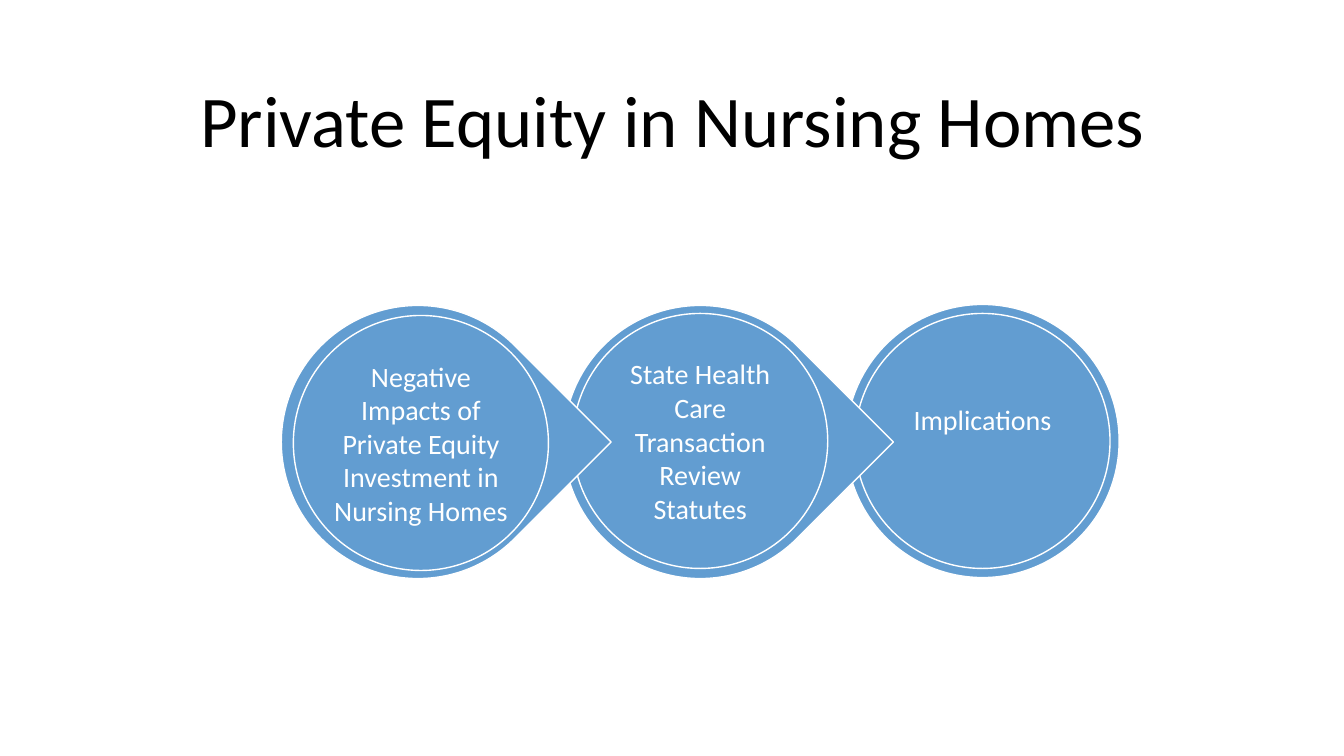
from dataclasses import dataclass

from pptx import Presentation
from pptx.dml.color import RGBColor
from pptx.enum.shapes import MSO_SHAPE
from pptx.enum.text import MSO_ANCHOR, PP_ALIGN
from pptx.slide import Slide
from pptx.util import Inches, Pt

COLORS = {"title": "000000", "drop": "629DD1", "light": "FFFFFF"}
FONT = "Calibri"
DROP_SIZE = 2.71
RING_SIZE = 2.53
LABEL_SIZE = 1.81
INSET = 0.03


@dataclass
class Stage:
    label: str
    drop_left: float
    drop_top: float
    ring_left: float
    ring_top: float
    pointed: bool = True
    lift: float = 0  # extra bottom inset that raises the label


# Back to front, so that each point overlaps the stage to its right
STAGES = [
    Stage("Implications", 8.39, 3.02, 8.48, 3.11, pointed=False, lift=0.44),
    Stage("State Health Care Transaction Review Statutes", 5.59, 3.03, 5.68, 3.11),
    Stage("Negative Impacts of Private Equity Investment in Nursing Homes",
          2.79, 3.03, 2.91, 3.13),
]


def add_text(slide: Slide, text: str, left: float, top: float, width: float,
             height: float, size: float, color: str, inset: float,
             lift: float = 0, line_spacing: float = 1.0) -> None:
    frame = slide.shapes.add_textbox(
        Inches(left), Inches(top), Inches(width), Inches(height)).text_frame
    frame.word_wrap = True
    frame.vertical_anchor = MSO_ANCHOR.MIDDLE
    frame.margin_left = frame.margin_right = frame.margin_top = Inches(inset)
    frame.margin_bottom = Inches(inset + lift)
    paragraph = frame.paragraphs[0]
    paragraph.text = text
    paragraph.alignment = PP_ALIGN.CENTER
    paragraph.line_spacing = line_spacing
    paragraph.font.name = FONT
    paragraph.font.size = Pt(size)
    paragraph.font.color.rgb = RGBColor.from_string(COLORS[color])


def add_disc(slide: Slide, preset: MSO_SHAPE, left: float, top: float,
             size: float, rotation: float = 0) -> None:
    disc = slide.shapes.add_shape(
        preset, Inches(left), Inches(top), Inches(size), Inches(size))
    disc.rotation = rotation
    disc.shadow.inherit = False
    disc.fill.solid()
    disc.fill.fore_color.rgb = RGBColor.from_string(COLORS["drop"])
    disc.line.color.rgb = RGBColor.from_string(COLORS["light"])
    disc.line.width = Pt(1)


def add_stage(slide: Slide, stage: Stage) -> None:
    preset, rotation = (MSO_SHAPE.TEAR, 45) if stage.pointed else (MSO_SHAPE.OVAL, 0)
    add_disc(slide, preset, stage.drop_left, stage.drop_top, DROP_SIZE, rotation)
    add_disc(slide, MSO_SHAPE.OVAL, stage.ring_left, stage.ring_top, RING_SIZE)
    margin = (RING_SIZE - LABEL_SIZE) / 2
    add_text(slide, stage.label, stage.ring_left + margin, stage.ring_top + margin,
             LABEL_SIZE, LABEL_SIZE, 20, "light", INSET, stage.lift)


def main() -> None:
    presentation = Presentation()
    presentation.slide_width = Inches(13.33)
    presentation.slide_height = Inches(7.5)
    slide = presentation.slides.add_slide(presentation.slide_layouts[6])

    # Title
    add_text(slide, "Private Equity in Nursing Homes", 0.92, 0.61, 11.5, 1.24,
             52, "title", 0.05, line_spacing=0.9)

    # Chain of stages
    for stage in STAGES:
        add_stage(slide, stage)

    presentation.save("out.pptx")


if __name__ == "__main__":
    main()
